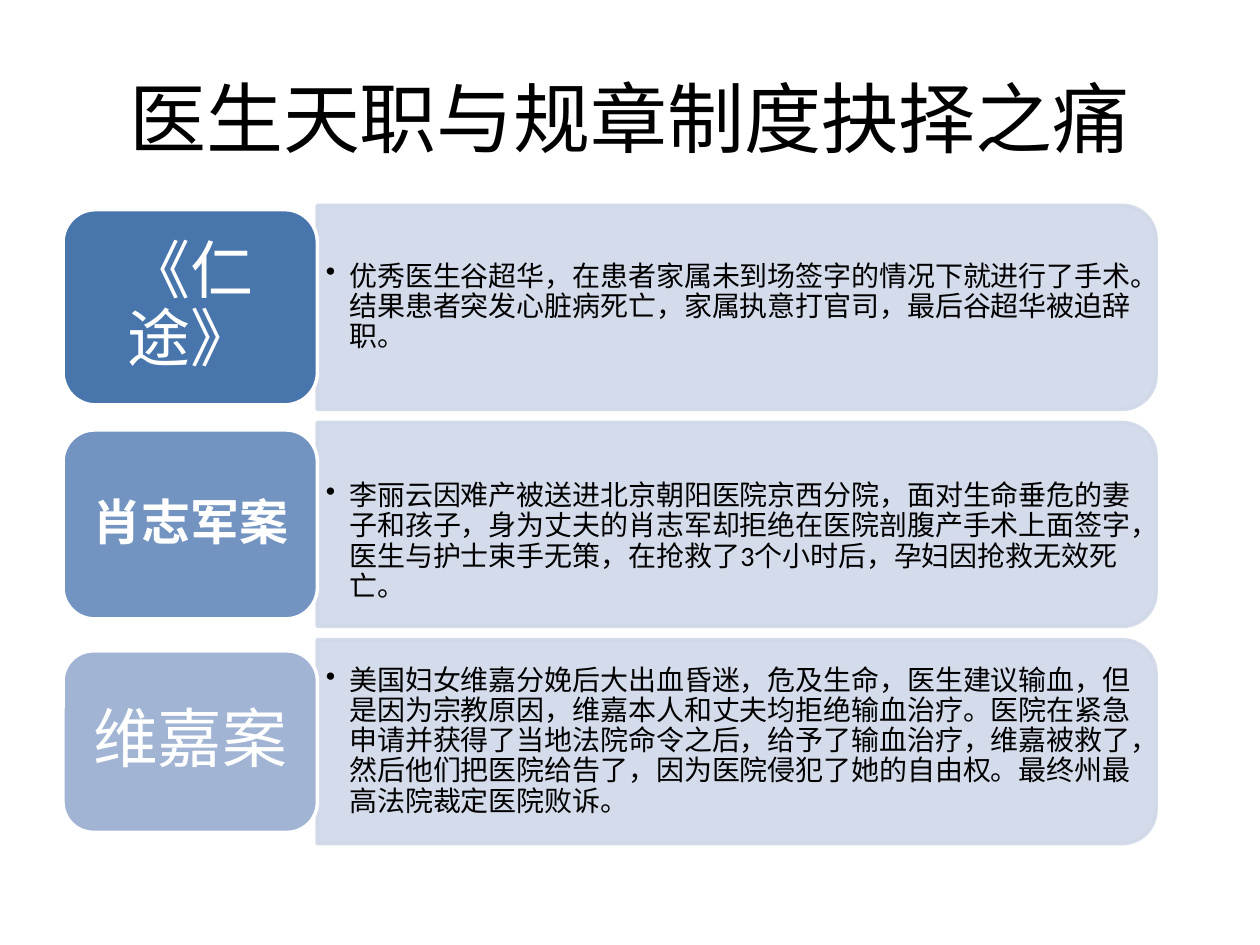
from lxml.etree import SubElement
from pptx import Presentation
from pptx.dml.color import RGBColor
from pptx.enum.shapes import MSO_SHAPE
from pptx.enum.text import MSO_ANCHOR, PP_ALIGN
from pptx.oxml.ns import qn
from pptx.util import Pt

BLACK = RGBColor(0x00, 0x00, 0x00)
WHITE = RGBColor(0xFF, 0xFF, 0xFF)
PANEL = RGBColor(0xD0, 0xD8, 0xE8)
DARK_BLUE = RGBColor(0x48, 0x75, 0xAC)
MID_BLUE = RGBColor(0x73, 0x93, 0xC1)
LIGHT_BLUE = RGBColor(0xA2, 0xB4, 0xD4)

FIRST_CENTER, PITCH = 175.6, 124.1
TILE_LEFT, TILE_WIDTH = 36, 145.4
PANEL_LEFT, PANEL_WIDTH, PANEL_HEIGHT = 181.2, 479.4, 116.6
BODY_WIDTH, BODY_HEIGHT = 473.8, 105.8

CASES = [
    ("《仁途》", 36, False, DARK_BLUE, 111.6, 0,
     "优秀医生谷超华，在患者家属未到场签字的情况下就进行了手术。结果患者突发心脏病死亡，"
     "家属执意打官司，最后谷超华被迫辞职。"),
    ("肖志军案", 28, True, MID_BLUE, 108, 20,
     "李丽云因难产被送进北京朝阳医院京西分院，面对生命垂危的妻子和孩子，身为丈夫的肖志军却"
     "拒绝在医院剖腹产手术上面签字，医生与护士束手无策，在抢救了3个小时后，孕妇因抢救无效死亡。"),
    ("维嘉案", 37, False, LIGHT_BLUE, 103.7, 0,
     "美国妇女维嘉分娩后大出血昏迷，危及生命，医生建议输血，但是因为宗教原因，维嘉本人和丈夫"
     "均拒绝输血治疗。医院在紧急申请并获得了当地法院命令之后，给予了输血治疗，维嘉被救了，"
     "然后他们把医院给告了，因为医院侵犯了她的自由权。最终州最高法院裁定医院败诉。"),
]


class SlideBuilder:
    font = "Calibri"

    def __init__(self, slide):
        self.slide = slide

    def add_run(self, p, text, size, color, bold=False):
        r = p.add_run()
        r.text = text
        r.font.name = self.font
        r.font.size = Pt(size)
        r.font.bold = bold
        r.font.color.rgb = color

    def set_frame(self, tf, side, top, bottom):
        tf.word_wrap = True
        tf.vertical_anchor = MSO_ANCHOR.MIDDLE
        tf.margin_left = tf.margin_right = Pt(side)
        tf.margin_top, tf.margin_bottom = Pt(top), Pt(bottom)

    def add_title(self, text):
        sp = self.slide.shapes.title
        sp.left, sp.top, sp.width, sp.height = Pt(36), Pt(21.6), Pt(648), Pt(90)
        tf = sp.text_frame
        tf.vertical_anchor = MSO_ANCHOR.MIDDLE
        p = tf.paragraphs[0]
        p.alignment = PP_ALIGN.CENTER
        self.add_run(p, text, 44, BLACK)

    def add_box(self, kind, left, top, width, height, fill, line):
        sp = self.slide.shapes.add_shape(kind, Pt(left), Pt(top), Pt(width), Pt(height))
        sp.shadow.inherit = False
        sp.fill.solid()
        sp.fill.fore_color.rgb = fill
        sp.line.color.rgb = line
        sp.line.width = Pt(2)
        return sp

    def add_panel(self, center):
        middle = PANEL_LEFT + PANEL_WIDTH / 2
        sp = self.add_box(MSO_SHAPE.ROUND_2_SAME_RECTANGLE,
                          middle - PANEL_HEIGHT / 2, center - PANEL_WIDTH / 2,
                          PANEL_HEIGHT, PANEL_WIDTH, PANEL, PANEL)
        sp.rotation = 90
        for color in sp._element.spPr.iter(qn("a:srgbClr")):
            SubElement(color, qn("a:alpha"), val="90000")

    def add_bullet_text(self, center, text, extra_top):
        sp = self.slide.shapes.add_textbox(Pt(PANEL_LEFT), Pt(center - BODY_HEIGHT / 2),
                                           Pt(BODY_WIDTH), Pt(BODY_HEIGHT))
        tf = sp.text_frame
        self.set_frame(tf, 5, 2.5 + extra_top, 2.5)
        p = tf.paragraphs[0]
        p.line_spacing = 0.9
        pPr = p._p.get_or_add_pPr()
        pPr.set("marL", str(Pt(13.5)))
        pPr.set("indent", str(Pt(-13.5)))
        SubElement(pPr, qn("a:buChar"), char="•")
        self.add_run(p, text, 16, BLACK)

    def add_tile(self, center, height, fill, text, size, bold):
        sp = self.add_box(MSO_SHAPE.ROUNDED_RECTANGLE, TILE_LEFT, center - height / 2,
                          TILE_WIDTH, height, fill, WHITE)
        tf = sp.text_frame
        self.set_frame(tf, 10, 5, 5)
        p = tf.paragraphs[0]
        p.alignment = PP_ALIGN.CENTER
        p.line_spacing = 0.9
        self.add_run(p, text, size, WHITE, bold)


def main():
    prs = Presentation()
    prs.slide_width, prs.slide_height = Pt(720), Pt(540)
    s = SlideBuilder(prs.slides.add_slide(prs.slide_layouts[5]))
    s.add_title("医生天职与规章制度抉择之痛")
    for i, (name, size, bold, fill, height, extra_top, story) in enumerate(CASES):
        center = FIRST_CENTER + i * PITCH
        s.add_panel(center)
        s.add_bullet_text(center, story, extra_top)
        s.add_tile(center, height, fill, name, size, bold)
    prs.save("out.pptx")


if __name__ == "__main__":
    main()
